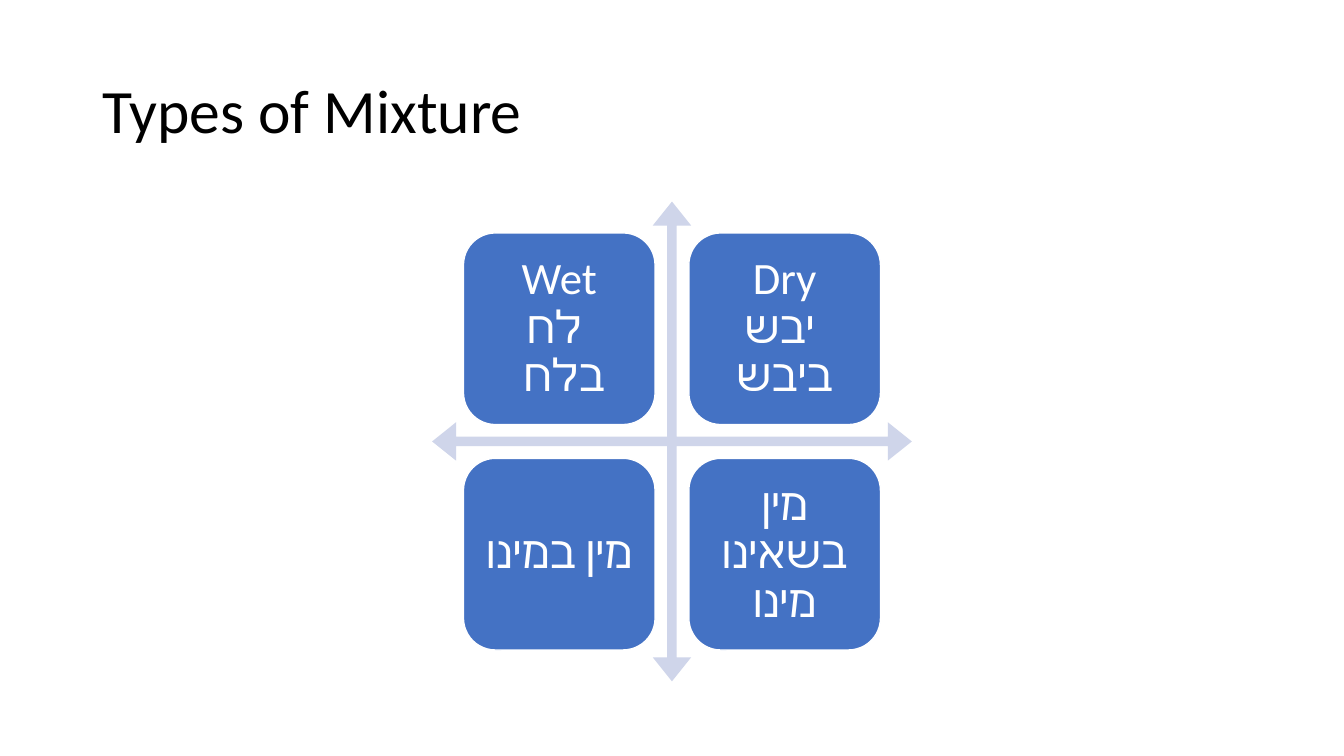
from lxml import etree
from pptx import Presentation
from pptx.dml.color import RGBColor
from pptx.enum.shapes import MSO_SHAPE
from pptx.enum.text import MSO_ANCHOR, PP_ALIGN
from pptx.oxml.ns import qn
from pptx.util import Cm, Pt

QUAD_ARROW = MSO_SHAPE.QUAD_ARROW
ROUNDED = MSO_SHAPE.ROUNDED_RECTANGLE
MIDDLE = MSO_ANCHOR.MIDDLE
CENTER = PP_ALIGN.CENTER

FONT = "Calibri"
COLORS = {"title": "000000", "arrows": "CFD5EA", "tile": "4472C4", "white": "FFFFFF"}

# Lengths in centimetres
ARROWS_LEFT, ARROWS_TOP, ARROWS_SIZE = 10.89, 5.08, 12.09
TILE_SIZE, TILE_STEP = 4.83, 5.68
TILE_INSET = 0.33

# Lines of each tile, row by row
MIXTURES = [
    [["Wet", " לח בלח "], ["Dry", " יבש ביבש"]],
    [["מין במינו"], ["מין בשאינו מינו"]],
]


def rgb(name):
    return RGBColor.from_string(COLORS[name])


def add_run(paragraph, text, size, color):
    run = paragraph.add_run()
    run.text = text
    run.font.size = Pt(size)
    run.font.name = FONT
    run.font.color.rgb = rgb(color)
    complex_script = etree.SubElement(run.font._element, qn("a:cs"))
    complex_script.set("typeface", FONT)


def add_title(slide, text):
    title = slide.shapes.add_textbox(Cm(2.33), Cm(1.01), Cm(29.21), Cm(3.68))
    frame = title.text_frame
    frame.word_wrap = True
    frame.vertical_anchor = MIDDLE
    paragraph = frame.paragraphs[0]
    paragraph.line_spacing = 0.9
    add_run(paragraph, text, 44, "title")


def add_flat_shape(slide, kind, left, top, size, fill):
    shape = slide.shapes.add_shape(kind, Cm(left), Cm(top), Cm(size), Cm(size))
    shape.shadow.inherit = False
    shape.fill.solid()
    shape.fill.fore_color.rgb = rgb(fill)
    return shape


def add_axes(slide):
    axes = add_flat_shape(slide, QUAD_ARROW, ARROWS_LEFT, ARROWS_TOP, ARROWS_SIZE, "arrows")
    axes.line.fill.background()
    for index, ratio in enumerate((0.02, 0.04, 0.05)):
        axes.adjustments[index] = ratio


def add_mixture(slide, left, top, lines):
    """Add a tile holding one right-to-left paragraph of the given lines."""
    tile = add_flat_shape(slide, ROUNDED, left, top, TILE_SIZE, "tile")
    tile.line.color.rgb = rgb("white")
    tile.line.width = Pt(1)
    frame = tile.text_frame
    frame.word_wrap = True
    frame.vertical_anchor = MIDDLE
    frame.margin_left = frame.margin_right = Cm(TILE_INSET)
    frame.margin_top = frame.margin_bottom = Cm(TILE_INSET)
    paragraph = frame.paragraphs[0]
    paragraph.alignment = CENTER
    paragraph.line_spacing = 0.9
    paragraph._p.get_or_add_pPr().set("rtl", "1")
    for index, line in enumerate(lines):
        if index:
            paragraph.add_line_break()
        add_run(paragraph, line, 32, "white")


def main():
    deck = Presentation()
    deck.slide_width, deck.slide_height = Cm(33.87), Cm(19.05)
    slide = deck.slides.add_slide(deck.slide_layouts[6])

    add_title(slide, "Types of Mixture")
    add_axes(slide)
    margin = (ARROWS_SIZE - TILE_STEP - TILE_SIZE) / 2
    for row, mixtures in enumerate(MIXTURES):
        for column, lines in enumerate(mixtures):
            left = ARROWS_LEFT + margin + column * TILE_STEP
            top = ARROWS_TOP + margin + row * TILE_STEP
            add_mixture(slide, left, top, lines)

    deck.save("out.pptx")


if __name__ == "__main__":
    main()
